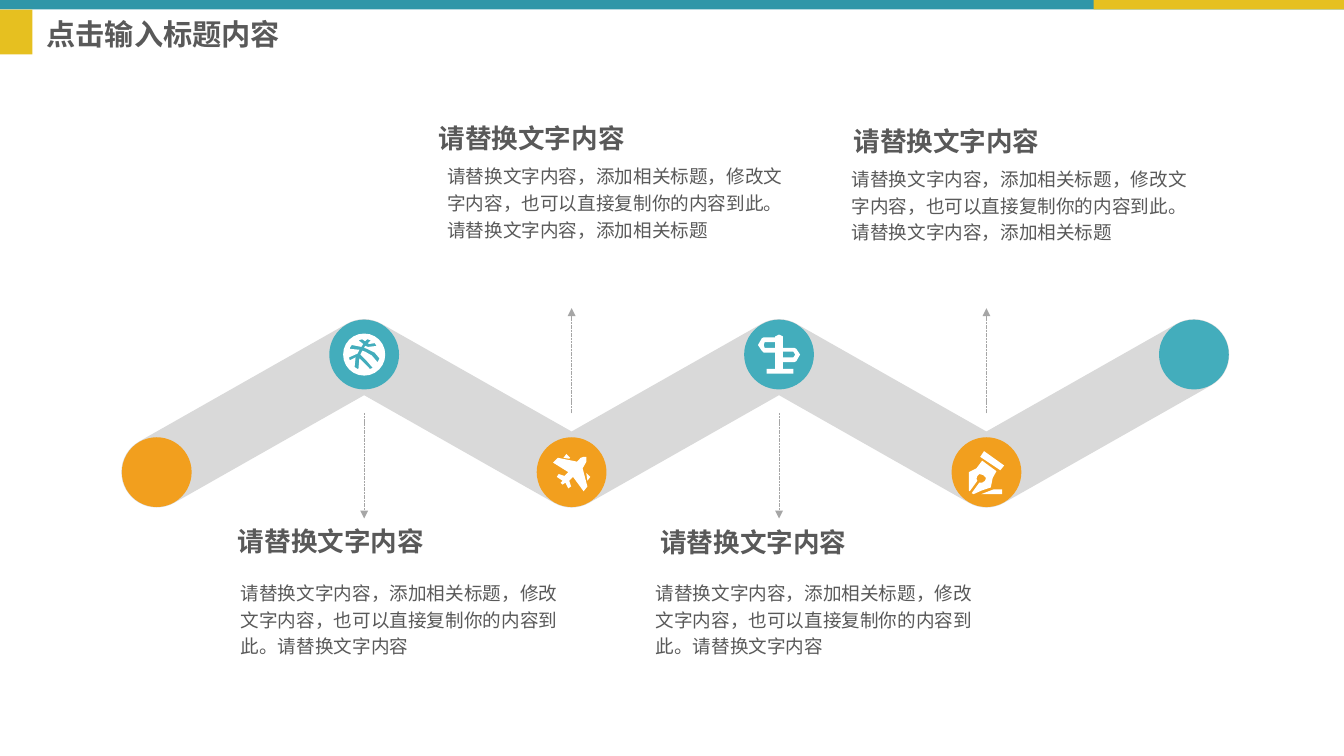
from dataclasses import dataclass
from math import atan2, cos, degrees, radians, sin

from lxml import etree
from pptx import Presentation
from pptx.dml.color import RGBColor
from pptx.enum.dml import MSO_LINE
from pptx.enum.shapes import MSO_CONNECTOR, MSO_SHAPE
from pptx.enum.text import MSO_ANCHOR, PP_ALIGN
from pptx.oxml.ns import qn
from pptx.util import Inches, Pt

RECTANGLE, OVAL = MSO_SHAPE.RECTANGLE, MSO_SHAPE.OVAL
STRAIGHT, FINE_DASH = MSO_CONNECTOR.STRAIGHT, MSO_LINE.SQUARE_DOT
LEFT, TOP, MIDDLE = PP_ALIGN.LEFT, MSO_ANCHOR.TOP, MSO_ANCHOR.MIDDLE

DARK_TEAL = RGBColor(0x2F, 0x96, 0xA8)
YELLOW = RGBColor(0xE6, 0xC0, 0x20)
TEAL = RGBColor(0x43, 0xAD, 0xBC)
ORANGE = RGBColor(0xF2, 0x9F, 0x1E)
BAND_GRAY = RGBColor(0xD9, 0xD9, 0xD9)
ARROW_GRAY = RGBColor(0xA6, 0xA6, 0xA6)
TEXT_GRAY = RGBColor(0x59, 0x59, 0x59)
WHITE = RGBColor(0xFF, 0xFF, 0xFF)
FONT = "Roboto Condensed"

SLIDE_WIDTH, SLIDE_HEIGHT = 14.06, 7.91
HEADER_HEIGHT, HEADER_SPLIT = 0.1, 11.44

# Zigzag grid: six columns, odd ones on the upper row
FIRST_COLUMN, COLUMN_PITCH, COLUMN_COUNT = 1.64, 2.17, 6
UPPER_ROW, LOWER_ROW = 3.71, 4.94
MIDDLE_ROW = (UPPER_ROW + LOWER_ROW) / 2
BAND_RADIUS, NODE_SIZE, ARROW_LENGTH = 0.37, 0.73, 1.1

HEADING = "请替换文字内容"
BODY = "请替换文字内容，添加相关标题，修改文字内容，也可以直接复制你的内容到此。请替换文字内容"

Point = tuple[float, float]
Contour = list[Point]


@dataclass
class Icon:
    """Outlines in hundredths of an inch."""
    width: float
    height: float
    contours: list[Contour]


@dataclass
class Milestone:
    """Heading and body lefts are measured from the node's centre."""
    column: int
    icon: Icon
    heading_left: float
    heading_top: float
    body_left: float
    body_top: float
    body_width: float
    body: str


def arc(centre: Point, radius: float, start: float, end: float, steps: int = 24) -> Contour:
    angles = [radians(start + (end - start) * step / steps) for step in range(steps + 1)]
    return [(centre[0] + radius * cos(angle), centre[1] + radius * sin(angle)) for angle in angles]


BALL = Icon(44, 44, [
    arc((22, 22), 22, 0, 360),
    [(9, 12), (7, 15), (7, 16), (17, 17), (15, 21), (6, 25), (7, 28), (13, 25), (12, 35), (15, 37),
     (16, 37), (17, 26), (22, 31), (28, 37), (31, 36), (25, 29), (18, 22), (20, 18), (23, 19),
     (30, 23), (36, 30), (38, 26), (33, 20), (25, 16), (22, 15), (23, 13), (26, 14), (35, 13),
     (33, 10), (27, 11), (26, 10), (29, 7), (25, 6), (23, 8), (20, 6), (16, 7), (21, 11), (19, 14)],
])
SIGNPOST = Icon(44, 42, [
    [(18, 8), (7, 8), (6, 11), (7, 14), (18, 14)],
    [(26, 14), (38, 14), (40, 15), (44, 21), (40, 28), (38, 29), (26, 29), (26, 36), (37, 36),
     (37, 41), (9, 41), (9, 36), (18, 36), (18, 19), (6, 19), (4, 17), (0, 11), (4, 4), (6, 3),
     (18, 3), (18, 2), (22, 0), (26, 2)],
    [(37, 18), (26, 18), (26, 24), (37, 24), (39, 21)],
])
PLANE = Icon(39, 38, [
    [(35, 3), (35, 8), (31, 15), (36, 34), (32, 39), (21, 24), (17, 28), (19, 34), (16, 36),
     (13, 30), (10, 32), (8, 30), (10, 28), (4, 24), (6, 21), (12, 23), (16, 19), (0, 9), (5, 4),
     (25, 8), (29, 4), (32, 3)],
    [(39, 24), (35, 20), (35, 21), (36, 28)],
    [(14, 0), (11, 4), (17, 5), (18, 4)],
])
PEN = Icon(37, 44, [
    [(1, 42), (0, 41), (0, 22), (8, 18), (14, 10), (29, 21), (25, 28), (23, 38), (14, 41), (5, 45),
     (3, 44), (11, 33), (14, 33), (17, 31), (18, 28), (15, 25), (11, 24), (9, 26), (8, 29), (9, 31)],
    [(13, 45), (35, 45), (35, 40), (26, 40)],
    [(33, 20), (37, 15), (16, 0), (12, 6)],
])

MILESTONES = [
    Milestone(1, BALL, -1.42, 5.38, -1.39, 5.99, 3.53, BODY),
    Milestone(3, SIGNPOST, -1.34, 5.39, -1.39, 5.99, 3.53, BODY),
    Milestone(2, PLANE, -1.49, 1.16, -1.4, 1.63, 3.79, BODY + "，添加相关标题"),
    Milestone(4, PEN, -1.49, 1.19, -1.51, 1.66, 3.79, BODY + "，添加相关标题"),
]


def is_upper(column: int) -> bool:
    return column % 2 == 1


def node_centre(column: int) -> Point:
    return FIRST_COLUMN + column * COLUMN_PITCH, UPPER_ROW if is_upper(column) else LOWER_ROW


def paint(shape, color: RGBColor) -> None:
    shape.shadow.inherit = False
    shape.fill.solid()
    shape.fill.fore_color.rgb = color
    shape.line.fill.background()


def draw_shape(slide, kind, left: float, top: float, width: float, height: float, color: RGBColor) -> None:
    paint(slide.shapes.add_shape(kind, Inches(left), Inches(top), Inches(width), Inches(height)), color)


def draw_outline(slide, contours: list[Contour], color: RGBColor, origin: Point = (0, 0),
                 units_per_inch: int = 1) -> None:
    precision = 1000 / units_per_inch
    builder = slide.shapes.build_freeform(scale=Inches(1) / 1000)
    for contour in contours:
        points = [(x * precision, y * precision) for x, y in contour]
        builder.move_to(*points[0])
        builder.add_line_segments(points[1:], close=True)
    paint(builder.convert_to_shape(Inches(origin[0]), Inches(origin[1])), color)


def band_outline() -> Contour:
    slope = degrees(atan2(LOWER_ROW - UPPER_ROW, COLUMN_PITCH))
    inner_offset = BAND_RADIUS / cos(radians(slope))
    first, *inner, last = [node_centre(column) for column in range(COLUMN_COUNT)]
    outline = arc(first, BAND_RADIUS, 90 - slope, 270 - slope)
    for x, y in inner:
        outline += (arc((x, y), BAND_RADIUS, 270 - slope, 270 + slope) if y == UPPER_ROW
                    else [(x, y - inner_offset)])
    outline += arc(last, BAND_RADIUS, 270 - slope, 450 - slope)
    for x, y in reversed(inner):
        outline += (arc((x, y), BAND_RADIUS, 90 - slope, 90 + slope) if y == LOWER_ROW
                    else [(x, y + inner_offset)])
    return outline


def draw_text(slide, text: str, left: float, top: float, width: float, height: float, size: float,
              bold: bool = False, wrap: bool = True, spacing: float = 1.2, before: float = 0,
              anchor=TOP) -> None:
    frame = slide.shapes.add_textbox(Inches(left), Inches(top), Inches(width), Inches(height)).text_frame
    frame.word_wrap = wrap
    frame.vertical_anchor = anchor
    paragraph = frame.paragraphs[0]
    paragraph.text = text
    paragraph.alignment = LEFT
    paragraph.line_spacing = spacing
    paragraph.space_before = Pt(before)
    paragraph.font.name = FONT
    paragraph.font.size = Pt(size)
    paragraph.font.bold = bold
    paragraph.font.color.rgb = TEXT_GRAY


def draw_arrow(slide, x: float, start: float, end: float) -> None:
    arrow = slide.shapes.add_connector(STRAIGHT, Inches(x), Inches(start), Inches(x), Inches(end))
    arrow.line.color.rgb = ARROW_GRAY
    arrow.line.width = Pt(0.5)
    arrow.line.dash_style = FINE_DASH
    etree.SubElement(arrow.line._get_or_add_ln(), qn("a:tailEnd"), type="triangle")
    etree.SubElement(arrow._element.spPr, qn("a:effectLst"))


def draw_milestone(slide, milestone: Milestone) -> None:
    x, y = node_centre(milestone.column)
    icon = milestone.icon
    draw_outline(slide, icon.contours, WHITE, (x - icon.width / 200, y - icon.height / 200), 100)
    direction = 1 if is_upper(milestone.column) else -1
    draw_arrow(slide, x, MIDDLE_ROW, MIDDLE_ROW + direction * ARROW_LENGTH)
    draw_text(slide, HEADING, x + milestone.heading_left, milestone.heading_top, 2.17, 0.47, 20,
              bold=True, wrap=False)
    draw_text(slide, milestone.body, x + milestone.body_left, milestone.body_top,
              milestone.body_width, 0.95, 14)


def main() -> None:
    presentation = Presentation()
    presentation.slide_width, presentation.slide_height = Inches(SLIDE_WIDTH), Inches(SLIDE_HEIGHT)
    slide = presentation.slides.add_slide(presentation.slide_layouts[6])

    # Header
    draw_shape(slide, RECTANGLE, 0, 0, SLIDE_WIDTH, HEADER_HEIGHT, DARK_TEAL)
    draw_shape(slide, RECTANGLE, HEADER_SPLIT, 0, SLIDE_WIDTH - HEADER_SPLIT, HEADER_HEIGHT, YELLOW)
    draw_shape(slide, RECTANGLE, 0, HEADER_HEIGHT, 0.34, 0.47, YELLOW)
    draw_text(slide, "点击输入标题内容", 0.39, 0.14, 3.62, 0.47, 22, bold=True,
              spacing=0.9, before=10, anchor=MIDDLE)

    # Zigzag band with its nodes
    draw_outline(slide, [band_outline()], BAND_GRAY)
    for column in range(COLUMN_COUNT):
        x, y = node_centre(column)
        draw_shape(slide, OVAL, x - NODE_SIZE / 2, y - NODE_SIZE / 2, NODE_SIZE, NODE_SIZE,
                   TEAL if is_upper(column) else ORANGE)

    # Icons, arrows and texts
    for milestone in MILESTONES:
        draw_milestone(slide, milestone)

    presentation.save("out.pptx")


if __name__ == "__main__":
    main()
